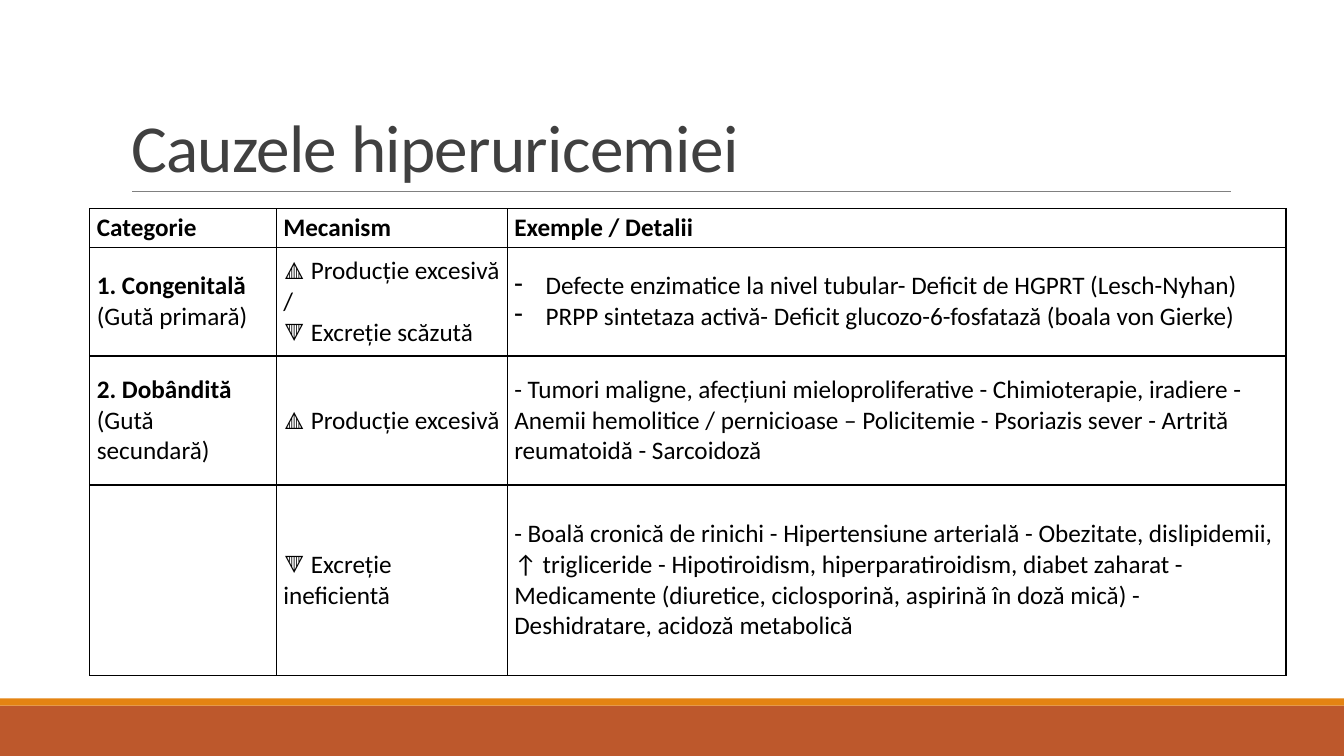
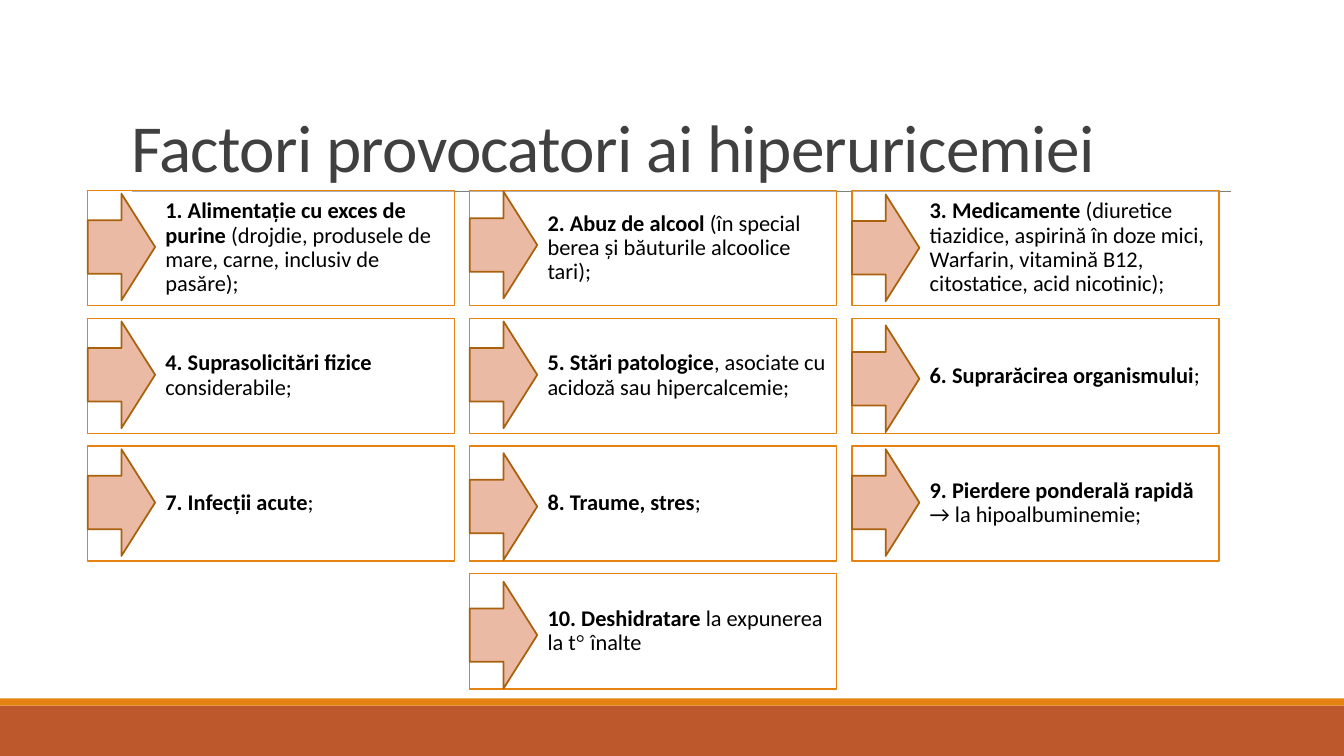
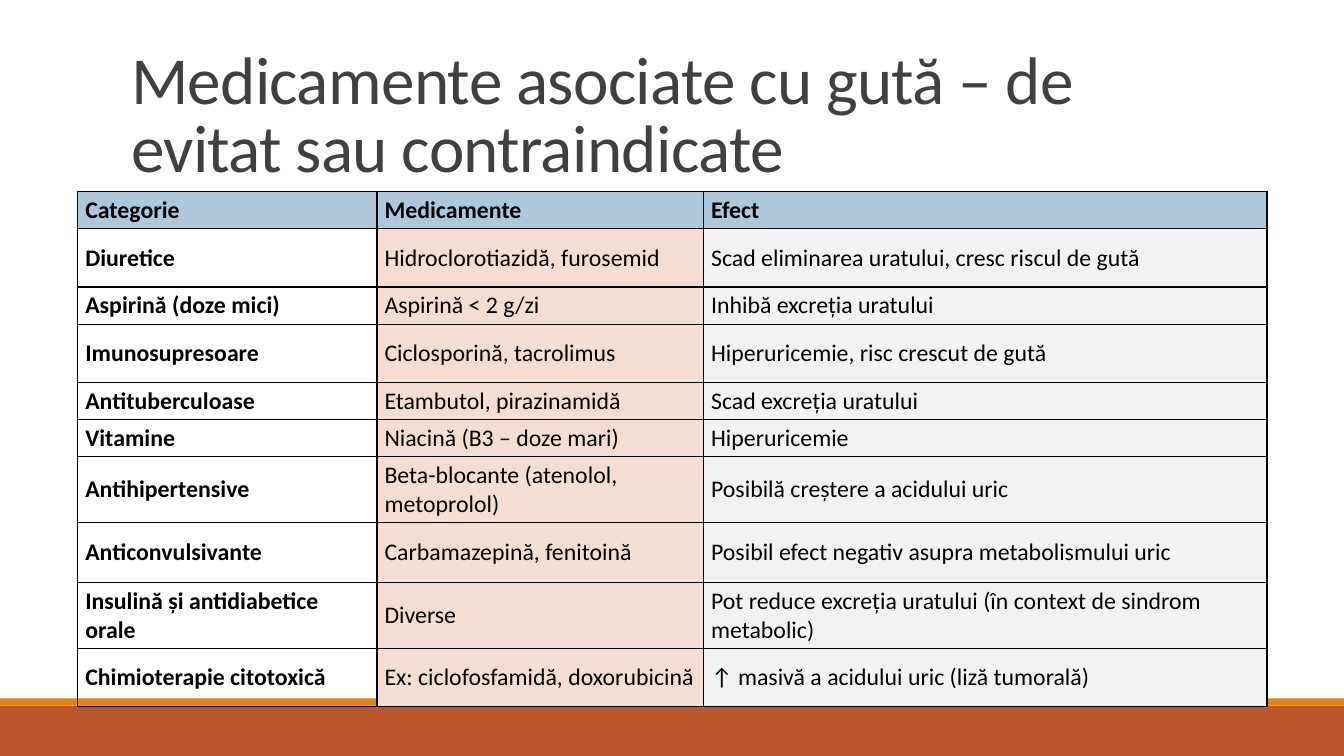
from dataclasses import dataclass

from lxml import etree
from pptx import Presentation
from pptx.dml.color import RGBColor
from pptx.enum.shapes import MSO_CONNECTOR, MSO_SHAPE, PP_PLACEHOLDER
from pptx.enum.text import MSO_ANCHOR, MSO_AUTO_SIZE, PP_ALIGN
from pptx.oxml.ns import qn
from pptx.util import Cm, Pt

RECT = MSO_SHAPE.RECTANGLE
ARROW = MSO_SHAPE.RIGHT_ARROW
STRAIGHT = MSO_CONNECTOR.STRAIGHT
TITLE = PP_PLACEHOLDER.TITLE
LOW = MSO_ANCHOR.BOTTOM
MIDDLE = MSO_ANCHOR.MIDDLE
LEFT = PP_ALIGN.LEFT
FIXED = MSO_AUTO_SIZE.NONE

FONT = "Calibri"
BLACK, WHITE, GREY, DARK = "000000", "FFFFFF", "808080", "404040"
RUST, AMBER, BROWN, PEACH = "BD582C", "E48312", "A9610D", "EABAA5"
BLUE, BLUSH, PALE = "ADC8DD", "F5DDD2", "F2F2F2"

WIDE, HIGH = 33.87, 19.05


@dataclass
class Piece:
    text: str
    bold: bool = False
    font: str = FONT


@dataclass
class Cell:
    lines: list[list[Piece]]
    fill: str = ""
    dash: bool = False


@dataclass
class Grid:
    left: float
    top: float
    cols: list[float]
    rows: list[float]
    size: float
    pad: tuple[float, float]
    cells: list[list[Cell]]


@dataclass
class Card:
    col: int
    row: int
    drop: float
    words: list[Piece]


def paint(target, color: str) -> None:
    target.solid()
    target.fore_color.rgb = RGBColor.from_string(color)


def write(para, words: list[Piece], size: float, color: str = BLACK) -> None:
    para.alignment = LEFT
    for piece in words:
        run = para.add_run()
        run.text = piece.text
        run.font.name = piece.font
        run.font.size = Pt(size)
        run.font.bold = piece.bold
        paint(run.font.fill, color)


def shape(slide, kind, box: tuple[float, ...], fill: str, edge: str = "", width: float = 1):
    item = slide.shapes.add_shape(kind, *map(Cm, box))
    item.shadow.inherit = False
    paint(item.fill, fill)
    if edge:
        paint(item.line.fill, edge)
        item.line.width = Pt(width)
    else:
        item.line.fill.background()
    return item


def frame(slide, layout) -> None:
    for holder in list(layout.placeholders):
        if holder.placeholder_format.type == TITLE:
            holder.left, holder.top = Cm(3.05), Cm(0.79)
            holder.width, holder.height = Cm(27.94), Cm(4.04)
        else:
            layout.shapes.element.remove(holder.element)
    base = shape(slide, RECT, (0, 17.78, WIDE, 1.27), RUST)
    strip = shape(slide, RECT, (0, 17.6, WIDE, 0.18), AMBER)
    rule = slide.shapes.add_connector(STRAIGHT, Cm(3.33), Cm(4.83), Cm(31.01), Cm(4.83))
    paint(rule.line.fill, GREY)
    rule.line.width = Pt(0.5)
    etree.SubElement(rule.element.spPr, qn("a:effectLst"))
    for item in (base, strip, rule):
        layout.shapes.element.append(item.element)


def head(slide, text: str) -> None:
    body = slide.shapes.title.text_frame
    body.auto_size = FIXED
    body.word_wrap = True
    body.vertical_anchor = LOW
    para = body.paragraphs[0]
    para.line_spacing = 0.85
    write(para, [Piece(text)], 48, DARK)
    para.runs[0].font._element.set("spc", "-50")


def border(cell) -> None:
    props = cell._tc.get_or_add_tcPr()
    for spot, side in enumerate(("lnL", "lnR", "lnT", "lnB")):
        line = etree.Element(qn(f"a:{side}"), w=str(Pt(1)))
        fill = etree.SubElement(line, qn("a:solidFill"))
        etree.SubElement(fill, qn("a:srgbClr"), val=BLACK)
        props.insert(spot, line)


def bullet(para) -> None:
    props = para._p.get_or_add_pPr()
    props.set("marL", str(Cm(0.79)))
    props.set("indent", str(-Cm(0.79)))
    etree.SubElement(props, qn("a:buChar"), char="-")


def fill_cell(cell, data: Cell, grid: Grid) -> None:
    side, edge = map(Cm, grid.pad)
    cell.margin_left = cell.margin_right = side
    cell.margin_top = cell.margin_bottom = edge
    cell.vertical_anchor = MIDDLE
    if data.fill:
        paint(cell.fill, data.fill)
    else:
        cell.fill.background()
    border(cell)
    body = cell.text_frame
    for spot, words in enumerate(data.lines):
        para = body.add_paragraph() if spot else body.paragraphs[0]
        if data.dash:
            bullet(para)
        write(para, words, grid.size)


def draw_grid(slide, grid: Grid) -> None:
    table = slide.shapes.add_table(
        len(grid.rows), len(grid.cols), Cm(grid.left), Cm(grid.top),
        Cm(sum(grid.cols)), Cm(sum(grid.rows))).table
    table.first_row = table.horz_banding = False
    for col, width in zip(table.columns, grid.cols):
        col.width = Cm(width)
    for row, height, cells in zip(table.rows, grid.rows, grid.cells):
        row.height = Cm(height)
        for cell, data in zip(row.cells, cells):
            fill_cell(cell, data, grid)


def draw_card(slide, card: Card) -> None:
    left, top = 2.21 + 9.63 * card.col, 4.8 + 3.22 * card.row
    box = shape(slide, RECT, (left, top, 9.25, 2.9), WHITE, AMBER)
    color = box.element.spPr.find(qn("a:solidFill"))[0]
    etree.SubElement(color, qn("a:alpha"), val="40000")
    body = box.text_frame
    body.word_wrap = True
    body.vertical_anchor = MIDDLE
    body.margin_left = Cm(1.96)
    body.margin_right = body.margin_top = body.margin_bottom = Cm(0.18)
    para = body.paragraphs[0]
    para.line_spacing = 0.9
    write(para, card.words, 16)
    shape(slide, ARROW, (left, top + card.drop, 1.7, 2.69), PEACH, BROWN, 1.25)


def plain(text: str, bold: bool = False, fill: str = "") -> Cell:
    return Cell([[Piece(text, bold)]], fill)


def pair(lead: str, rest: str) -> list[Piece]:
    return [Piece(lead, True), Piece(rest)]


CAUSES = Grid(2.26, 5.26, [4.7, 5.82, 19.63], [0.97, 2.74, 3.25, 4.8], 18, (0.18, 0.08), [
    [plain(text, True) for text in ("Categorie", "Mecanism", "Exemple / Detalii")],
    [
        Cell([pair("1. Congenitală", " (Gută primară)")]),
        Cell([[Piece("🔺 Producție excesivă /")], [Piece("🔻 Excreție scăzută")]]),
        Cell([
            [Piece("Defecte enzimatice la nivel tubular- Deficit de HGPRT (Lesch-Nyhan)")],
            [Piece("PRPP sintetaza activă- Deficit glucozo-6-fosfatază (boala von Gierke)")],
        ], dash=True),
    ],
    [
        Cell([pair("2. Dobândită", " (Gută secundară)")]),
        plain("🔺 Producție excesivă"),
        plain("- Tumori maligne, afecțiuni mieloproliferative - Chimioterapie, iradiere - "
              "Anemii hemolitice / pernicioase – Policitemie - Psoriazis sever - Artrită "
              "reumatoidă - Sarcoidoză"),
    ],
    [
        Cell([]),
        plain("🔻 Excreție ineficientă"),
        plain("- Boală cronică de rinichi - Hipertensiune arterială - Obezitate, dislipidemii, "
              "↑ trigliceride - Hipotiroidism, hiperparatiroidism, diabet zaharat - "
              "Medicamente (diuretice, ciclosporină, aspirină în doză mică) - "
              "Deshidratare, acidoză metabolică"),
    ],
])

CARDS = [
    Card(0, 0, 0.08, pair("1. Alimentație cu exces de purine ",
                          "(drojdie, produsele de mare, carne, inclusiv de pasăre);")),
    Card(1, 0, 0.03, pair("2. Abuz de alcool ",
                          "(în special berea și băuturile alcoolice tari);")),
    Card(2, 0, 0.1, pair("3. Medicamente ",
                         "(diuretice tiazidice, aspirină în doze mici, Warfarin, "
                         "vitamină B12, citostatice, acid nicotinic);")),
    Card(0, 1, 0.08, pair("4. Suprasolicitări fizice ", "considerabile;")),
    Card(1, 1, 0.08, pair("5. Stări patologice", ", asociate cu acidoză sau hipercalcemie;")),
    Card(2, 1, 0.18, pair("6. Suprarăcirea organismului", ";")),
    Card(0, 2, 0.08, pair("7. Infecții acute", ";")),
    Card(1, 2, 0.18, pair("8. Traume, stres", ";")),
    Card(2, 2, 0.08, pair("9. Pierdere ponderală rapidă ", "→ la hipoalbuminemie;")),
    Card(1, 3, 0.2, pair("10. Deshidratare ", "la expunerea la t")
         + [Piece("° ", font="Times New Roman"), Piece("înalte")]),
]

DRUGS = [
    ("Diuretice", "Hidroclorotiazidă, furosemid", "Scad eliminarea uratului, cresc riscul de gută"),
    ("Aspirină (doze mici)", "Aspirină < 2 g/zi", "Inhibă excreția uratului"),
    ("Imunosupresoare", "Ciclosporină, tacrolimus", "Hiperuricemie, risc crescut de gută"),
    ("Antituberculoase", "Etambutol, pirazinamidă", "Scad excreția uratului"),
    ("Vitamine", "Niacină (B3 – doze mari)", "Hiperuricemie"),
    ("Antihipertensive", "Beta-blocante (atenolol, metoprolol)",
     "Posibilă creștere a acidului uric"),
    ("Anticonvulsivante", "Carbamazepină, fenitoină",
     "Posibil efect negativ asupra metabolismului uric"),
    ("Insulină și antidiabetice orale", "Diverse",
     "Pot reduce excreția uratului (în context de sindrom metabolic)"),
    ("Chimioterapie citotoxică", "Ex: ciclofosfamidă, doxorubicină",
     "↑ masivă a acidului uric (liză tumorală)"),
]

EFFECTS = Grid(
    1.96, 4.83, [7.54, 8.23, 14.2],
    [0.86, 1.47, 0.86, 1.47, 0.86, 0.86, 1.47, 1.5, 1.5, 1.47], 17, (0.19, 0.1),
    [[plain(text, True, BLUE) for text in ("Categorie", "Medicamente", "Efect")]]
    + [[plain(group, True), plain(drug, fill=BLUSH), plain(effect, fill=PALE)]
       for group, drug, effect in DRUGS])


def main() -> None:
    deck = Presentation()
    deck.slide_width, deck.slide_height = Cm(WIDE), Cm(HIGH)
    layout = deck.slide_layouts[5]
    first, second, third = [deck.slides.add_slide(layout) for _ in range(3)]
    frame(first, layout)

    head(first, "Cauzele hiperuricemiei")
    draw_grid(first, CAUSES)

    head(second, "Factori provocatori ai hiperuricemiei")
    for card in CARDS:
        draw_card(second, card)

    head(third, "Medicamente asociate cu gută – de evitat sau contraindicate")
    draw_grid(third, EFFECTS)

    deck.save("out.pptx")


if __name__ == "__main__":
    main()
